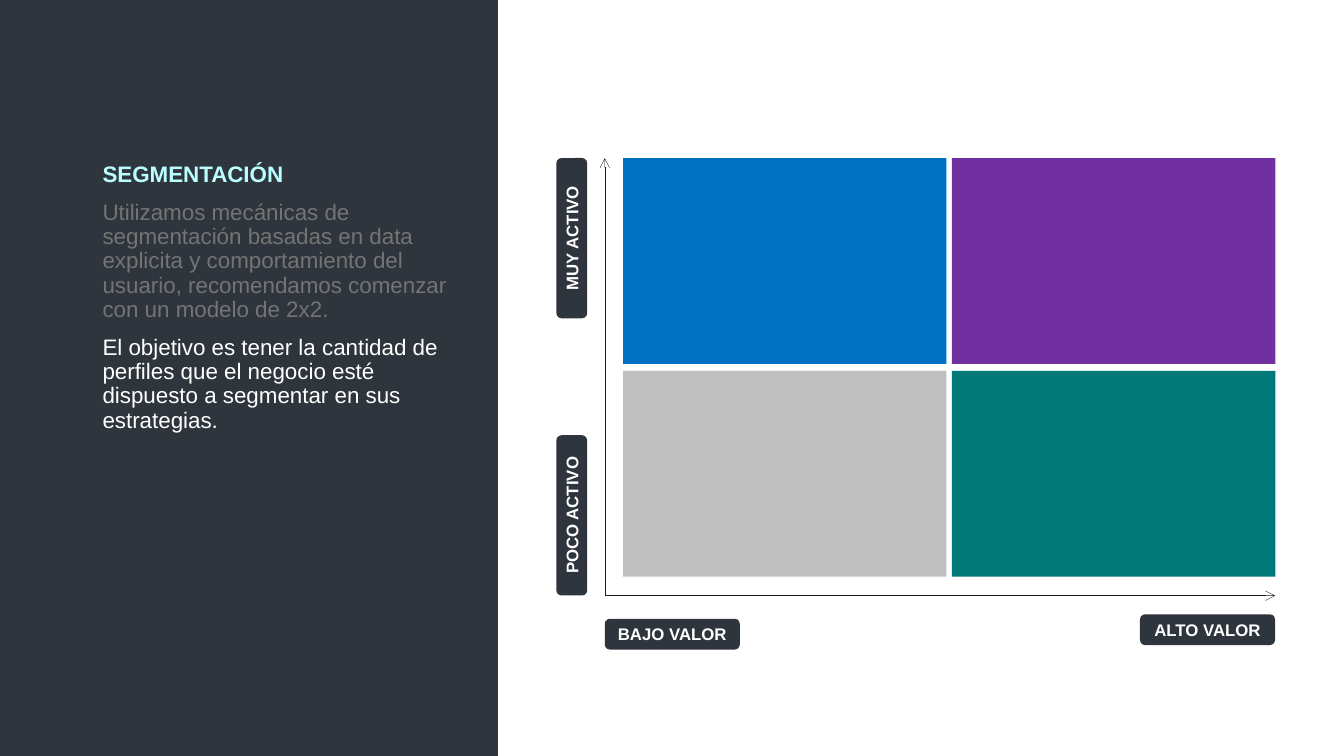
"""Build the customer segmentation slide with its 2x2 activity and value matrix."""
from dataclasses import dataclass

from lxml.etree import SubElement
from pptx import Presentation
from pptx.dml.color import RGBColor
from pptx.enum.shapes import MSO_CONNECTOR as Connector, MSO_SHAPE as Preset
from pptx.enum.text import MSO_ANCHOR as Anchor, PP_ALIGN as Align
from pptx.oxml.ns import qn
from pptx.shapes.autoshape import Shape
from pptx.slide import Slide
from pptx.text.text import TextFrame
from pptx.util import Pt


@dataclass(frozen=True)
class Theme:
    font: str = "Arial"
    dark: str = "2F353D"
    white: str = "FFFFFF"
    heading: str = "B9FFFF"
    muted: str = "747474"
    axis: str = "1C1C1C"
    body_size: float = 16
    label_size: float = 12


@dataclass(frozen=True)
class Box:
    left: float
    top: float
    width: float
    height: float


@dataclass(frozen=True)
class Label:
    text: str
    box: Box
    rotation: float = 0


@dataclass(frozen=True)
class Passage:
    text: str
    color: str
    bold: bool = False


THEME = Theme()
PANEL = Box(0, 0, 355.7, 540)
BODY = Box(66.2, 113, 266.4, 373)
FIRST_CELL = Box(445, 113, 231, 147)
COLUMN_STEP, ROW_STEP = 235, 152
QUADRANTS = (("0070C0", "7030A0"), ("BFBFBF", "017978"))
ORIGIN = (432, 425.5)
AXIS_ENDS = ((432, 113), (910.8, 425.5))
LABELS = (
    Label("BAJO VALOR", Box(432, 442, 96.5, 22)),
    Label("ALTO VALOR", Box(814.3, 438.8, 96.5, 22)),
    Label("POCO ACTIVO", Box(351.2, 357.1, 114.5, 22), 270),
    Label("MUY ACTIVO", Box(351.2, 159.1, 114.5, 22), 270),
)
PASSAGES = (
    Passage("SEGMENTACIÓN", THEME.heading, True),
    Passage("Utilizamos mecánicas de segmentación basadas en data explicita y "
            "comportamiento del usuario, recomendamos comenzar con un modelo de 2x2.",
            THEME.muted),
    Passage("El objetivo es tener la cantidad de perfiles que el negocio esté "
            "dispuesto a segmentar en sus estrategias.", THEME.white),
)


def write(frame: TextFrame, text: str, *, size: float, color: str, bold: bool = False,
          align: Align = Align.LEFT, line_spacing: float = 1, space_before: float = 0) -> None:
    """Write a formatted paragraph, using the empty first one when available."""
    first = frame.paragraphs[0]
    paragraph = frame.add_paragraph() if first.runs else first
    paragraph.alignment = align
    paragraph.line_spacing = line_spacing
    paragraph.space_before = Pt(space_before)
    run = paragraph.add_run()
    run.text = text
    run.font.name = THEME.font
    run.font.size = Pt(size)
    run.font.bold = bold
    run.font.color.rgb = RGBColor.from_string(color)


def add_block(slide: Slide, box: Box, color: str, preset: Preset = Preset.RECTANGLE) -> Shape:
    """Add a filled shape without outline or shadow."""
    shape = slide.shapes.add_shape(
        preset, Pt(box.left), Pt(box.top), Pt(box.width), Pt(box.height))
    shape.shadow.inherit = False
    shape.fill.solid()
    shape.fill.fore_color.rgb = RGBColor.from_string(color)
    shape.line.fill.background()
    return shape


def add_label(slide: Slide, label: Label) -> None:
    """Add a rounded axis label."""
    shape = add_block(slide, label.box, THEME.dark, Preset.ROUNDED_RECTANGLE)
    shape.rotation = label.rotation
    frame = shape.text_frame
    frame.word_wrap = False
    frame.vertical_anchor = Anchor.MIDDLE
    write(frame, label.text, size=THEME.label_size, color=THEME.white, bold=True,
          align=Align.CENTER)


def add_axis(slide: Slide, end: tuple[float, float]) -> None:
    """Draw an arrow from the matrix origin."""
    axis = slide.shapes.add_connector(
        Connector.STRAIGHT, Pt(ORIGIN[0]), Pt(ORIGIN[1]), Pt(end[0]), Pt(end[1]))
    axis.line.width = Pt(0.25)
    axis.line.color.rgb = RGBColor.from_string(THEME.axis)
    SubElement(axis.line._get_or_add_ln(), qn("a:tailEnd"), type="arrow")
    SubElement(axis._element.spPr, qn("a:effectLst"))


def add_body(slide: Slide) -> None:
    """Add the explanatory text on the dark panel."""
    text_box = slide.shapes.add_textbox(
        Pt(BODY.left), Pt(BODY.top), Pt(BODY.width), Pt(BODY.height))
    frame = text_box.text_frame
    frame.word_wrap = True
    for index, passage in enumerate(PASSAGES):
        write(frame, passage.text, size=THEME.body_size, color=passage.color,
              bold=passage.bold, line_spacing=0.9, space_before=10 if index else 0)


def add_matrix(slide: Slide) -> None:
    """Lay out the four quadrants on an even grid."""
    for row, colors in enumerate(QUADRANTS):
        for column, color in enumerate(colors):
            box = Box(FIRST_CELL.left + column * COLUMN_STEP,
                      FIRST_CELL.top + row * ROW_STEP,
                      FIRST_CELL.width, FIRST_CELL.height)
            add_block(slide, box, color)


def main() -> None:
    """Build and save the presentation."""
    presentation = Presentation()
    presentation.slide_width = Pt(960)
    presentation.slide_height = Pt(540)
    slide = presentation.slides.add_slide(presentation.slide_layouts[6])
    add_block(slide, PANEL, THEME.dark)
    add_body(slide)
    add_matrix(slide)
    for end in AXIS_ENDS:
        add_axis(slide, end)
    for label in LABELS:
        add_label(slide, label)
    presentation.save("out.pptx")


if __name__ == "__main__":
    main()
